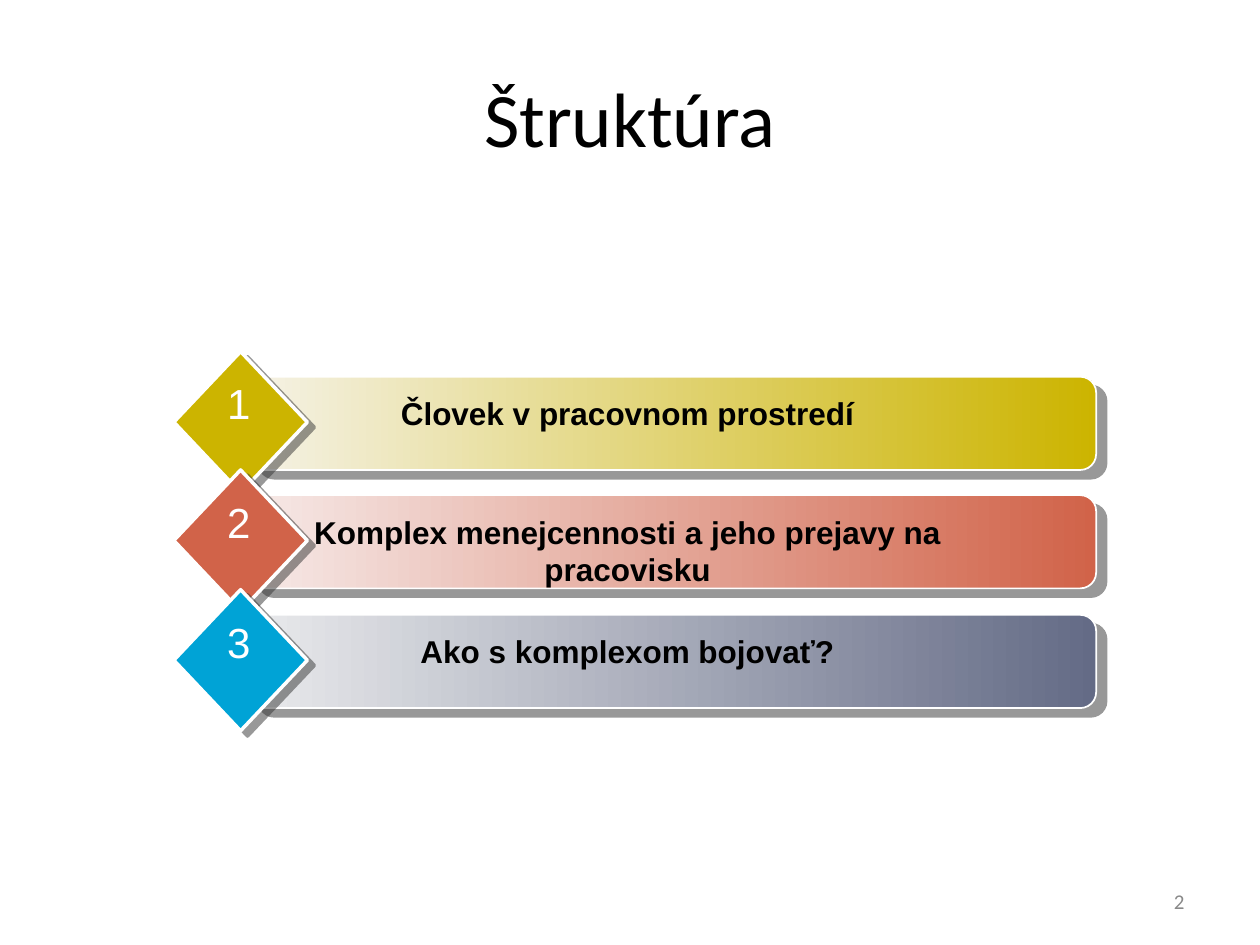
import lxml.etree
import pptx
import pptx.dml.color
import pptx.enum.shapes
import pptx.enum.text
import pptx.oxml.ns
import pptx.util

PX = 9144  # 100 px to the inch
ALIGN = pptx.enum.text.PP_ALIGN
ANCHOR = pptx.enum.text.MSO_ANCHOR
SHAPE = pptx.enum.shapes.MSO_SHAPE

# label, gradient start, gradient end, diamond colour
ROWS = [
    ("Človek v pracovnom prostredí", "F5F2E6", "CCB400", "CCB400"),
    ("Komplex menejcennosti a jeho prejavy na pracovisku", "F6E9E7", "D16349", "D16349"),
    ("Ako s komplexom bojovať?", "E9EAEC", "646B86", "00A3D6"),
]


def color(hex_value):
    return pptx.dml.color.RGBColor.from_string(hex_value)


def emu(*lengths):
    return [pptx.util.Emu(length * PX) for length in lengths]


def add_text(shapes, box, text, size, font, hex_value, align=ALIGN.CENTER,
             anchor=ANCHOR.TOP, bold=False, wrap=True):
    text_box = shapes.add_textbox(*emu(*box))
    frame = text_box.text_frame
    frame.word_wrap = wrap
    frame.vertical_anchor = anchor
    paragraph = frame.paragraphs[0]
    paragraph.alignment = align
    run = paragraph.add_run()
    run.text = text
    run.font.size = pptx.util.Pt(size)
    run.font.name = font
    run.font.bold = bold
    run.font.color.rgb = color(hex_value)


def add_shadow(shape, distance, angle):
    shape.shadow.inherit = False
    qn = pptx.oxml.ns.qn
    effects = shape._element.spPr.find(qn("a:effectLst"))
    shadow = lxml.etree.SubElement(
        effects, qn("a:outerShdw"), dist=str(pptx.util.Pt(distance)),
        dir=str(angle * 60000), algn="ctr", rotWithShape="0")
    tint = lxml.etree.SubElement(shadow, qn("a:srgbClr"), val="333333")
    lxml.etree.SubElement(tint, qn("a:alpha"), val="50000")


def add_outlined_shape(shapes, kind, box, line_width, distance, angle):
    shape = shapes.add_shape(kind, *emu(*box))
    shape.line.color.rgb = color("FFFFFF")
    shape.line.width = pptx.util.Pt(line_width)
    add_shadow(shape, distance, angle)
    return shape


def add_row(slide, left, top, number, label, start, end, diamond_color):
    shapes = slide.shapes.add_group_shape().shapes

    # Gradient bar
    bar = add_outlined_shape(shapes, SHAPE.ROUNDED_RECTANGLE,
                             (left + 59, top + 20, 673, 74), 1, 7.8, 40)
    bar.adjustments[0] = 0.17
    bar.fill.gradient()
    bar.fill.gradient_angle = 0
    for stop, position, hex_value in zip(bar.fill.gradient_stops, (0, 1), (start, end)):
        stop.position = position
        stop.color.rgb = color(hex_value)

    # Diamond marker
    diamond = add_outlined_shape(shapes, SHAPE.DIAMOND, (left, top, 106, 112), 2, 5, 37)
    diamond.fill.solid()
    diamond.fill.fore_color.rgb = color(diamond_color)

    # Label and number
    add_text(shapes, (left + 94, top + 29, 532, 40), label, 18, "Arial", "000000", bold=True)
    add_text(shapes, (left + 24, top + 16, 55, 74), str(number), 24, "Arial", "FFFFFF",
             wrap=False)


def add_agenda(slide, left, top):
    for index, row in enumerate(ROWS):
        add_row(slide, left, top + index * 189 // 2, index + 1, *row)


def main():
    presentation = pptx.Presentation()
    presentation.slide_width, presentation.slide_height = emu(1000, 750)
    slide = presentation.slides.add_slide(presentation.slide_layouts[6])

    # Title
    add_text(slide.shapes, (50, 30, 900, 125), "Štruktúra", 44, "Calibri", "000000",
             anchor=ANCHOR.MIDDLE)
    # Numbered rows
    add_agenda(slide, 138, 279)
    # Page number
    add_text(slide.shapes, (717, 695, 233, 40), "2", 12, "Calibri", "898989",
             align=ALIGN.RIGHT, anchor=ANCHOR.MIDDLE)

    presentation.save("out.pptx")


if __name__ == "__main__":
    main()
